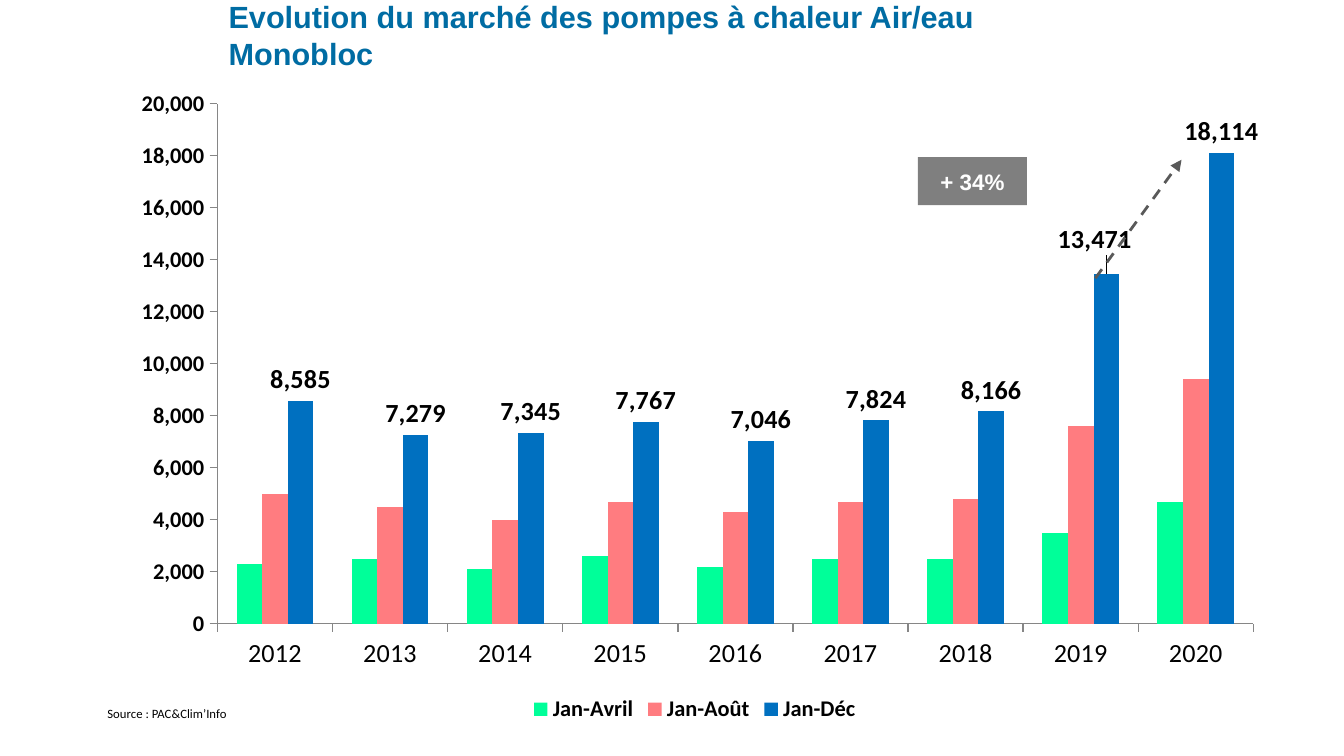
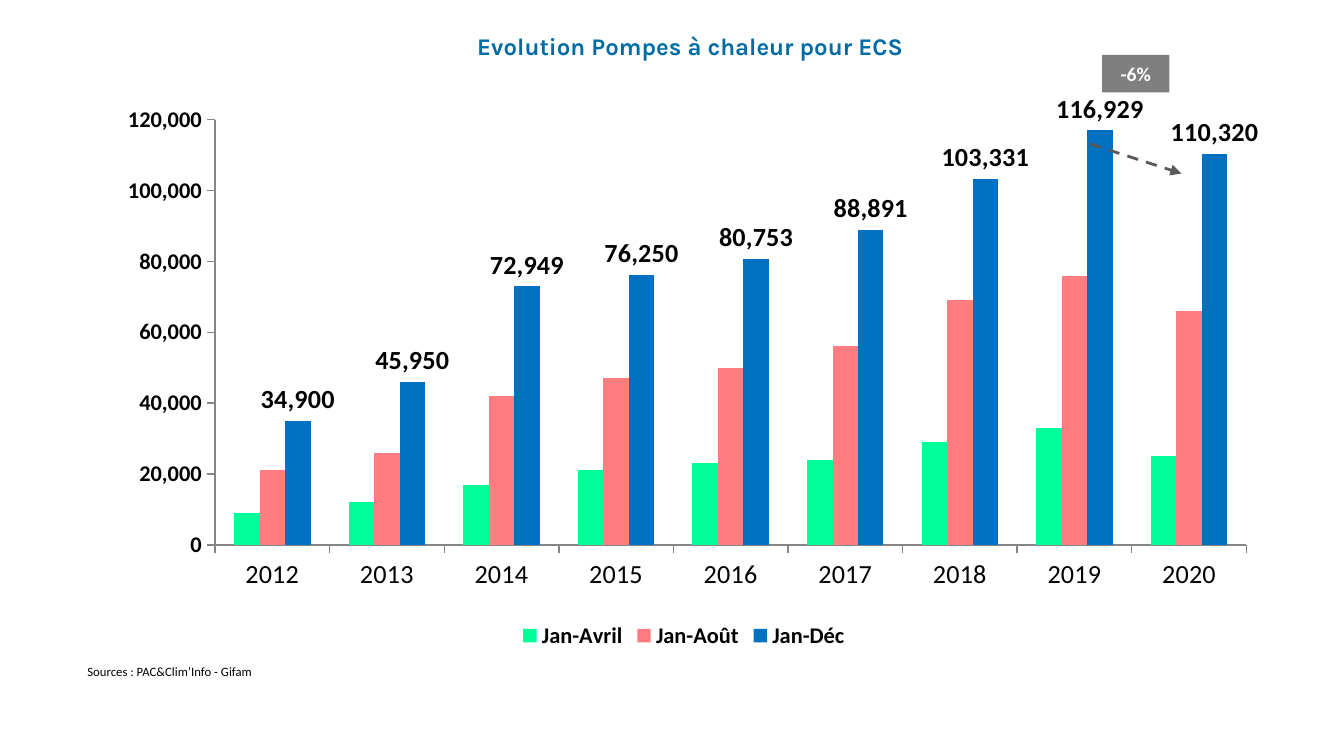
from lxml import etree
from pptx import Presentation
from pptx.chart.data import CategoryChartData
from pptx.dml.color import RGBColor
from pptx.enum.chart import XL_CHART_TYPE, XL_LABEL_POSITION, XL_LEGEND_POSITION, XL_TICK_MARK
from pptx.enum.dml import MSO_LINE
from pptx.enum.shapes import MSO_CONNECTOR, MSO_SHAPE
from pptx.enum.text import MSO_ANCHOR, PP_ALIGN
from pptx.oxml import parse_xml
from pptx.oxml.ns import nsdecls, qn
from pptx.util import Cm, Pt

CLUSTERED = XL_CHART_TYPE.COLUMN_CLUSTERED
OUTSIDE_END = XL_LABEL_POSITION.OUTSIDE_END
BOTTOM = XL_LEGEND_POSITION.BOTTOM
TICK_OUTSIDE = XL_TICK_MARK.OUTSIDE
DASH = MSO_LINE.DASH
STRAIGHT = MSO_CONNECTOR.STRAIGHT
RECTANGLE = MSO_SHAPE.RECTANGLE
MIDDLE = MSO_ANCHOR.MIDDLE
TOP = MSO_ANCHOR.TOP
CENTER = PP_ALIGN.CENTER
LEFT = PP_ALIGN.LEFT

BLACK, WHITE = "000000", "FFFFFF"
TITLE_BLUE, ARROW_GREY, AXIS_GREY = "006CA3", "595959", "868686"
SERIES_COLORS = {"Jan-Avril": "00FF99", "Jan-Août": "FF7C80", "Jan-Déc": "0070C0"}
YEARS = [str(year) for year in range(2012, 2021)]
NUMBER_FORMAT = "#,##0"
BODY_FONT = "Calibri"


def rgb(color):
    """Turn a hex string into a colour."""
    return RGBColor.from_string(color)


def set_font(font, size, color=BLACK, bold=False, name=BODY_FONT):
    """Apply size, colour, weight and typeface to a font."""
    font.size, font.bold, font.name = Pt(size), bold, name
    font.color.rgb = rgb(color)


def manual_layout(x, y, width=None, height=None):
    """Build a chart layout: an inner plot area if sized, else an offset."""
    parts = []
    if width:
        parts += [("layoutTarget", "inner"), ("xMode", "edge"), ("yMode", "edge")]
    parts += [("x", x), ("y", y)]
    if width:
        parts += [("w", width), ("h", height)]
    body = "".join(f'<c:{tag} val="{value}"/>' for tag, value in parts)
    return parse_xml(f'<c:layout {nsdecls("c")}><c:manualLayout>{body}'
                     '</c:manualLayout></c:layout>')


class MarketDeck:
    """Market slides sharing one style for titles, charts, arrows and badges."""

    def __init__(self):
        """Open an empty presentation."""
        self.presentation = Presentation()
        self.presentation.slide_width = Cm(25.4)
        self.presentation.slide_height = Cm(14.29)
        self.slide = None

    def add_slide(self):
        """Start a new blank slide."""
        self.slide = self.presentation.slides.add_slide(self.presentation.slide_layouts[6])

    def fill_text(self, shape, text, anchor, alignment, size, **style):
        """Put one styled paragraph in a shape."""
        frame = shape.text_frame
        frame.vertical_anchor = anchor
        paragraph = frame.paragraphs[0]
        paragraph.text = text
        paragraph.alignment = alignment
        set_font(paragraph.font, size, **style)
        return frame

    def title(self, text, box, size, name):
        """Add the blue slide title."""
        shape = self.slide.shapes.add_textbox(*map(Cm, box))
        frame = self.fill_text(shape, text, MIDDLE, LEFT, size,
                               color=TITLE_BLUE, bold=True, name=name)
        frame.word_wrap = True
        frame.margin_left = frame.margin_right = Cm(0.18)
        frame.margin_top = frame.margin_bottom = Cm(0.1)

    def source(self, text, box):
        """Add the small source line."""
        shape = self.slide.shapes.add_textbox(*map(Cm, box))
        self.fill_text(shape, text, TOP, LEFT, 6.8).word_wrap = False

    def badge(self, text, box, size, name=BODY_FONT):
        """Add the half-transparent growth badge."""
        shape = self.slide.shapes.add_shape(RECTANGLE, *map(Cm, box))
        shape.shadow.inherit = False
        shape.line.fill.background()
        shape.fill.solid()
        shape.fill.fore_color.rgb = rgb(BLACK)
        fill_color = shape._element.spPr.find(".//" + qn("a:srgbClr"))
        etree.SubElement(fill_color, qn("a:alpha")).set("val", "50000")
        self.fill_text(shape, text, MIDDLE, CENTER, size, color=WHITE, bold=True, name=name)

    def arrow(self, start, end):
        """Add a dashed trend arrow."""
        connector = self.slide.shapes.add_connector(STRAIGHT, *map(Cm, start + end))
        connector.line.color.rgb = rgb(ARROW_GREY)
        connector.line.width = Pt(1.5)
        connector.line.dash_style = DASH
        properties = connector._element.spPr
        line = properties.find(qn("a:ln"))
        etree.SubElement(line, qn("a:tailEnd")).set("type", "triangle")
        etree.SubElement(properties, qn("a:effectLst"))

    def chart(self, box, rows, maximum, step, plot):
        """Add the yearly column chart and return it."""
        data = CategoryChartData(number_format=NUMBER_FORMAT)
        data.categories = YEARS
        for name, values in zip(SERIES_COLORS, rows):
            data.add_series(name, values)
        chart = self.slide.shapes.add_chart(CLUSTERED, *map(Cm, box), data).chart
        set_font(chart.font, 18)
        chart.has_title = False
        chart.has_legend = True
        chart.legend.position = BOTTOM
        chart.legend.include_in_layout = False
        set_font(chart.legend.font, 12, bold=True)
        for axis, size, bold in ((chart.category_axis, 14, False),
                                 (chart.value_axis, 12, True)):
            axis.has_major_gridlines = False
            axis.major_tick_mark = TICK_OUTSIDE
            axis.format.line.color.rgb = rgb(AXIS_GREY)
            axis.format.line.width = Pt(0.75)
            set_font(axis.tick_labels.font, size, bold=bold)
        chart.value_axis.minimum_scale = 0
        chart.value_axis.maximum_scale = maximum
        chart.value_axis.major_unit = step
        chart.value_axis.tick_labels.number_format = NUMBER_FORMAT
        chart.value_axis.tick_labels.number_format_is_linked = False
        columns = chart.plots[0]
        columns.gap_width, columns.overlap = 150, 0
        columns.vary_by_categories = False
        for series in columns.series:
            series.format.fill.solid()
            series.format.fill.fore_color.rgb = rgb(SERIES_COLORS[series.name])
            series.invert_if_negative = False
        labels = columns.series[-1].data_labels
        labels.show_value = True
        labels.position = OUTSIDE_END
        labels.number_format = NUMBER_FORMAT
        labels.number_format_is_linked = False
        set_font(labels.font, 14, bold=True)
        plot_area = chart._chartSpace.chart.plotArea
        for layout in plot_area.findall(qn("c:layout")):
            plot_area.remove(layout)
        plot_area.insert(0, manual_layout(*plot))
        return chart

    def shift_label(self, chart, year, x, y):
        """Move the full-year label of one year by a share of the chart size."""
        label = chart.plots[0].series[-1].points[YEARS.index(year)].data_label
        set_font(label.font, 14, bold=True)
        label.position = OUTSIDE_END
        label._dLbl.insert(1, manual_layout(x, y))


def main():
    """Build both market slides."""
    deck = MarketDeck()

    deck.add_slide()
    deck.title("Evolution du marché des pompes à chaleur Air/eau Monobloc",
               (4.14, 0.28, 17.15, 0.76), 16.4, "Arial")
    monobloc = deck.chart(
        (2.13, 1.47, 22, 12.29),
        [(2300, 2500, 2100, 2600, 2200, 2500, 2500, 3500, 4700),
         (5000, 4500, 4000, 4700, 4300, 4700, 4800, 7600, 9400),
         (8585, 7279, 7345, 7767, 7046, 7824, 8166, 13471, 18114)],
        20000, 2000, (0.09, 0.04, 0.89, 0.8))
    deck.shift_label(monobloc, "2019", -0.01, -0.02)
    deck.arrow((20.7, 5.26), (22.33, 3.02))
    deck.badge("+ 34%", (17.35, 2.97, 2.06, 0.91), 12, "Arial")
    deck.source("Source : PAC&Clim’Info", (1.78, 13.21, 2.77, 0.53))

    deck.add_slide()
    deck.title("Evolution Pompes à chaleur pour ECS",
               (8.84, 0.46, 10.62, 0.81), 12.8, "Karla")
    deck.chart(
        (1.85, 1.5, 22.15, 10.87),
        [(9000, 12000, 17000, 21000, 23000, 24000, 29000, 33000, 25000),
         (21000, 26000, 42000, 47000, 50000, 56000, 69000, 76000, 66000),
         (34900, 45950, 72949, 76250, 80753, 88891, 103331, 116929, 110320)],
        120000, 20000, (0.1, 0.07, 0.88, 0.74))
    deck.arrow((20.6, 2.72), (22.33, 3.28))
    deck.badge("-6%", (20.83, 1.04, 1.27, 0.71), 10.5)
    deck.source("Sources : PAC&Clim’Info - Gifam", (1.4, 12.42, 3.63, 0.53))

    deck.presentation.save("out.pptx")


if __name__ == "__main__":
    main()
